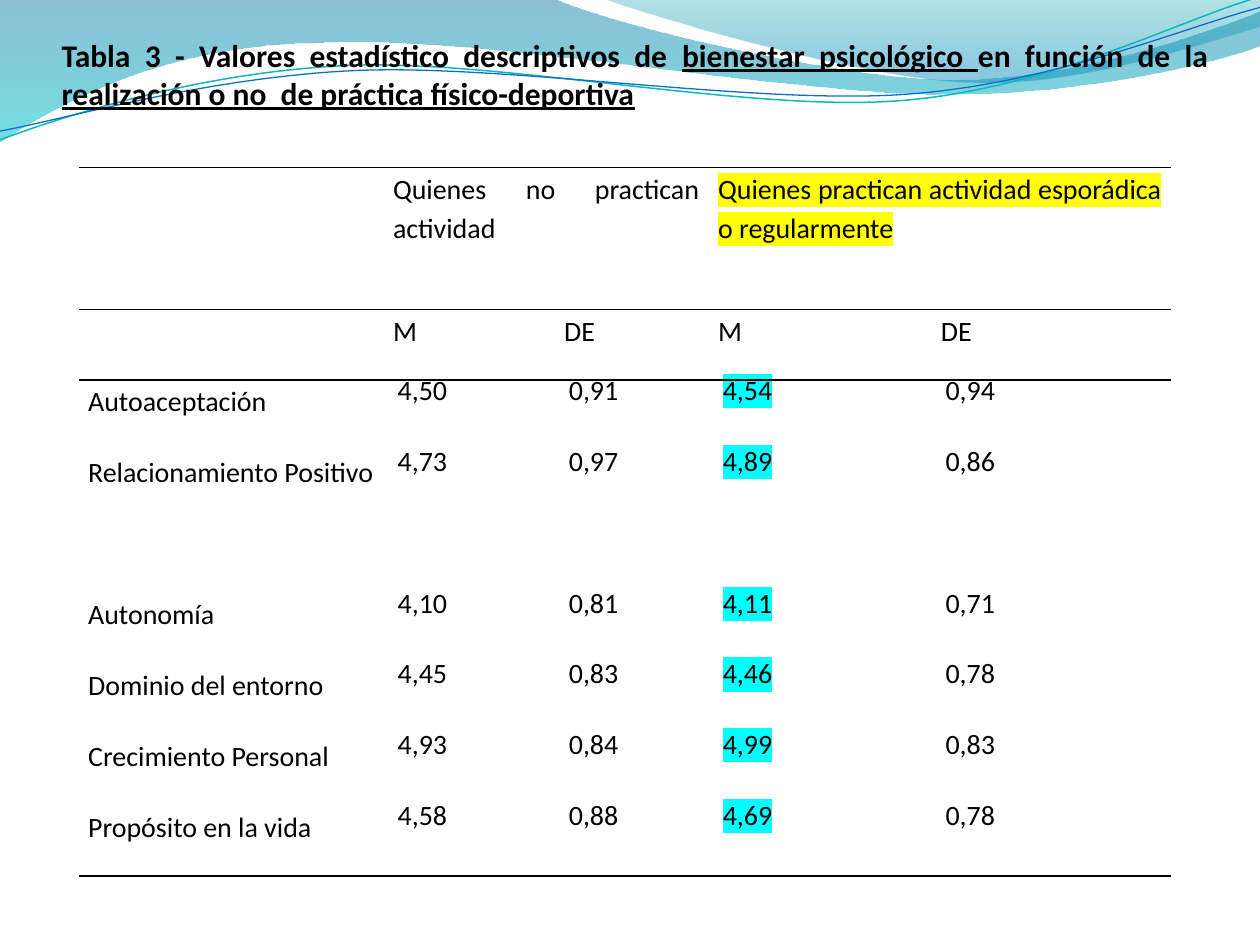
import math
from dataclasses import dataclass

from lxml import etree
from pptx import Presentation
from pptx.dml.color import RGBColor
from pptx.enum import text as t
from pptx.oxml.ns import qn
from pptx.util import Pt

Point = tuple[float, float]


@dataclass(frozen=True)
class Theme:
    font: str = "Calibri"
    ink: str = "000000"
    group_mark: str = "FFFF00"
    mean_mark: str = "00FFFF"
    title_size: float = 18
    table_size: float = 16
    rule: float = 1


@dataclass(frozen=True)
class Wave:
    """Points of chained cubic curves, with straight edges to the corners."""
    curves: list[list[Point]]
    corners: tuple[Point, ...] = ()
    stops: tuple[tuple[float, str, int], ...] = ()  # position, colour, opacity
    line: tuple[str, float] | None = None
    turn: float = 0  # degrees around the center
    center: Point = (0, 0)


THEME = Theme()

WAVES = [
    Wave([[(316.8, -0.7), (342.7, 12.2), (478.1, 45.4), (545.8, 45.4),
           (614.2, 45.4), (689.8, 18.7), (720, 6.5)],
          [(720.7, 25.9), (707.8, 31.7), (626.4, 54.7), (537.1, 54),
           (447.8, 54), (275, 20.2), (185, 24.5),
           (92.9, 25.2), (33.1, 59.8), (-0.7, 81.4)]],
         corners=((0, -0.7),), stops=((0, "0074A1", 45), (1, "00C6CF", 55))),
    Wave([[(344.9, -0.7), (366.5, 7.9), (491, 44.6), (553.7, 46.8),
           (616.3, 49.7), (691.9, 23), (720, 15.1)]],
         corners=((720, 0),), stops=((0, "00A1A9", 30), (0.8, "008BBF", 45))),
    Wave([[(0, 79.9), (34.6, 67), (113.8, 41), (199.4, 37.4),
           (284.4, 33.8), (427, 64.1), (513.4, 57.6),
           (599.8, 51.1), (675.4, 10.8), (718.6, -1.4)]],
         line=("0AB8BF", 0.85), turn=-2.7, center=(359.3, 41.4)),
    Wave([[(0, 74.9), (33.8, 69.1), (118.1, 43.9), (203.8, 40.3),
           (290.2, 36.7), (429.8, 59.8), (516.2, 54),
           (601.9, 48.2), (677.5, 15.1), (720, 4.3)]],
         line=("0F6FC6", 0.75), turn=-2.7, center=(359.6, 42.5)),
]

TITLE = [("Tabla 3 - Valores estadístico descriptivos de ", False),
         ("bienestar psicológico ", True),
         ("en función de la ", False),
         ("realización o no  de práctica físico-deportiva", True)]

GROUPS = {1: ("Quienes no practican actividad", None),
          3: ("Quienes practican actividad esporádica o regularmente", THEME.group_mark)}
MEASURES = ["M", "DE", "M", "DE"]
SCALES = [
    ("Autoaceptación", "4,50", "0,91", "4,54", "0,94"),
    ("Relacionamiento Positivo", "4,73", "0,97", "4,89", "0,86"),
    ("Autonomía", "4,10", "0,81", "4,11", "0,71"),
    ("Dominio del entorno", "4,45", "0,83", "4,46", "0,78"),
    ("Crecimiento Personal", "4,93", "0,84", "4,99", "0,83"),
    ("Propósito en la vida", "4,58", "0,88", "4,69", "0,78"),
]
COLUMN_WIDTHS = [174.2, 97.8, 88, 127.3, 136.7]
ROW_HEIGHT = 40.5
TALL_ROWS = {0, 3}
HEADER_ROWS = 2
NO_STYLE = "{2D5ABB26-0587-4C30-8999-92F81FD0307C}"


def write(paragraph, text: str, *, size: float = THEME.table_size, bold: bool = False,
          underline: bool = False, mark: str | None = None,
          spacing=None, indent: float = 0) -> None:
    """Add a justified run with its format."""
    paragraph.alignment = t.PP_ALIGN.JUSTIFY
    if spacing:
        paragraph.line_spacing = spacing
    if indent:
        paragraph._p.get_or_add_pPr().set("marL", str(Pt(indent)))
    run = paragraph.add_run()
    run.text = text
    font = run.font
    font.size, font.bold, font.underline = Pt(size), bold, underline
    font.color.rgb = RGBColor.from_string(THEME.ink)
    if mark:
        highlight = etree.SubElement(run._r.get_or_add_rPr(), qn("a:highlight"))
        etree.SubElement(highlight, qn("a:srgbClr"), val=mark)
    font.name = THEME.font


def level(point: Point, wave: Wave) -> Point:
    """The point's place before the wave is turned."""
    angle = math.radians(-wave.turn)
    x, y = point[0] - wave.center[0], point[1] - wave.center[1]
    return (wave.center[0] + x * math.cos(angle) - y * math.sin(angle),
            wave.center[1] + x * math.sin(angle) + y * math.cos(angle))


def bend(shape, curves: list[list[Point]]) -> None:
    """Turn each three straight steps of a curve into one cubic step."""
    path = next(shape._element.iter(qn("a:path")))
    steps = list(path)
    start = 0
    for curve in curves:
        for first in range(start + 1, start + len(curve), 3):
            cubic = etree.Element(qn("a:cubicBezTo"))
            steps[first].addprevious(cubic)
            for step in steps[first:first + 3]:
                cubic.append(step[0])
                path.remove(step)
        start += len(curve)


def draw_wave(slide, wave: Wave) -> None:
    outline = [point for curve in wave.curves for point in curve] + list(wave.corners)
    start, *rest = [tuple(Pt(value) for value in level(point, wave)) for point in outline]
    builder = slide.shapes.build_freeform(*start)
    builder.add_line_segments(rest, close=bool(wave.stops))
    shape = builder.convert_to_shape()
    bend(shape, wave.curves)
    shape.rotation = wave.turn
    shape.shadow.inherit = False
    if wave.line:
        color, width = wave.line
        shape.fill.background()
        shape.line.color.rgb = RGBColor.from_string(color)
        shape.line.width = Pt(width)
        return
    shape.line.fill.background()
    shape.fill.gradient()
    shape.fill.gradient_angle = 270
    for stop, (position, color, _) in zip(shape.fill.gradient_stops, wave.stops):
        stop.position = position
        stop.color.rgb = RGBColor.from_string(color)
    for color, (_, _, opacity) in zip(shape._element.iter(qn("a:srgbClr")), wave.stops):
        etree.SubElement(color, qn("a:alpha"), val=str(opacity * 1000))


def rule_cell(cell, ruled: str) -> None:
    """Draw the borders on the ruled sides and clear the others."""
    properties = cell._tc.get_or_add_tcPr()
    for index, side in enumerate("LRTB"):
        border = etree.Element(qn(f"a:ln{side}"), w=str(Pt(THEME.rule)))
        if side in ruled:
            fill = etree.SubElement(border, qn("a:solidFill"))
            etree.SubElement(fill, qn("a:srgbClr"), val=THEME.ink)
        else:
            etree.SubElement(border, qn("a:noFill"))
        properties.insert(index, border)


def draw_title(slide) -> None:
    title = slide.shapes.title
    title.left, title.top, title.width, title.height = Pt(28), Pt(16.5), Pt(669.6), Pt(51)
    frame = title.text_frame
    frame.word_wrap = True
    frame.auto_size = t.MSO_AUTO_SIZE.SHAPE_TO_FIT_TEXT
    frame.vertical_anchor = t.MSO_ANCHOR.MIDDLE
    for text, underline in TITLE:
        write(frame.paragraphs[0], text, size=THEME.title_size, bold=True, underline=underline)
    slide.shapes._spTree.append(title._element)  # in front of the waves


def draw_table(slide) -> None:
    count = HEADER_ROWS + len(SCALES)
    heights = [ROW_HEIGHT * (2 if row in TALL_ROWS else 1) for row in range(count)]
    table = slide.shapes.add_table(count, len(COLUMN_WIDTHS), Pt(45), Pt(95.75),
                                   Pt(sum(COLUMN_WIDTHS)), Pt(sum(heights))).table
    table.first_row = table.horz_banding = False
    table._tbl.tblPr.find(qn("a:tableStyleId")).text = NO_STYLE
    for column, width in zip(table.columns, COLUMN_WIDTHS):
        column.width = Pt(width)

    # Rules above and below the headers, and under the last row
    for index, (row, height) in enumerate(zip(table.rows, heights)):
        row.height = Pt(height)
        ruled = "T" * (index <= HEADER_ROWS) + "B" * (index < HEADER_ROWS or index == count - 1)
        for cell in row.cells:
            cell.margin_left = cell.margin_right = Pt(5.4)
            cell.margin_top = cell.margin_bottom = 0
            cell.fill.background()
            rule_cell(cell, ruled)

    # Headers
    for column, (group, mark) in GROUPS.items():
        table.cell(0, column).merge(table.cell(0, column + 1))
        write(table.cell(0, column).text_frame.paragraphs[0], group, mark=mark, spacing=1.15)
    for column, measure in enumerate(MEASURES, 1):
        write(table.cell(1, column).text_frame.paragraphs[0], measure, spacing=1.15)

    # Scales and their values
    for row, (scale, *values) in enumerate(SCALES, HEADER_ROWS):
        write(table.cell(row, 0).text_frame.paragraphs[0], scale, spacing=1.15)
        for column, value in enumerate(values, 1):
            write(table.cell(row, column).text_frame.paragraphs[0], value, indent=2.7,
                  spacing=Pt(16), mark=THEME.mean_mark if column == 3 else None)


def main() -> None:
    deck = Presentation()
    deck.slide_width, deck.slide_height = Pt(720), Pt(540)
    slide = deck.slides.add_slide(deck.slide_layouts[5])
    for wave in WAVES:
        draw_wave(slide, wave)
    draw_title(slide)
    draw_table(slide)
    deck.save("out.pptx")


if __name__ == "__main__":
    main()
